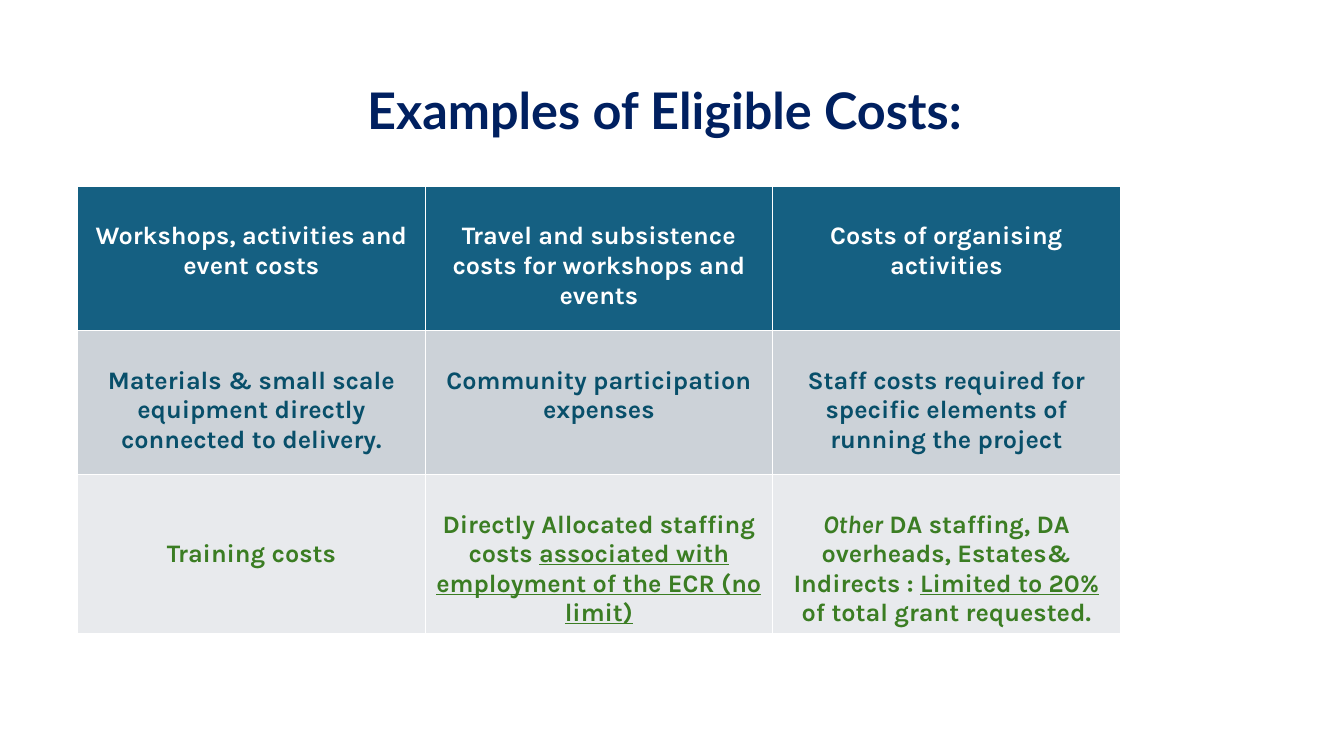
from pptx import Presentation
from pptx.dml.color import RGBColor
from pptx.enum.text import MSO_ANCHOR, PP_ALIGN
from pptx.util import Inches, Pt

LEFT, CENTER = PP_ALIGN.LEFT, PP_ALIGN.CENTER
MIDDLE = MSO_ANCHOR.MIDDLE
TITLE_ONLY = 5

NAVY = RGBColor(0x00, 0x20, 0x60)
WHITE = RGBColor(0xFF, 0xFF, 0xFF)
TEAL = RGBColor(0x15, 0x60, 0x82)
DARK_TEAL = RGBColor(0x08, 0x4F, 0x6A)
GREEN = RGBColor(0x3B, 0x7D, 0x23)
GREY = RGBColor(0xCC, 0xD2, 0xD8)
PALE_GREY = RGBColor(0xE8, 0xEA, 0xED)

TITLE_FORMAT = {"name": "Lato", "size": Pt(36), "bold": True}
CELL_FORMAT = {"name": "Karla", "size": Pt(18), "bold": True}
UNDERLINED = {"underline": True}
ITALIC = {"italic": True}

CELL_TOP = 0.35
LOW_CELL_TOP = 0.64

# Each row: height, fill, text colour, cells; each cell: top margin, spans.
COST_ROWS = [
    (1.43, TEAL, WHITE, [
        (CELL_TOP, [("Workshops, activities and event costs", {})]),
        (CELL_TOP, [("Travel and subsistence costs for workshops and events", {})]),
        (CELL_TOP, [("Costs of organising activities", {})]),
    ]),
    (1.43, GREY, DARK_TEAL, [
        (CELL_TOP, [("Materials & small scale equipment directly connected to delivery.", {})]),
        (CELL_TOP, [("Community participation expenses", {})]),
        (CELL_TOP, [("Staff costs required for specific elements of running the project", {})]),
    ]),
    (1.57, PALE_GREY, GREEN, [
        (LOW_CELL_TOP, [("Training costs", {})]),
        (CELL_TOP, [("Directly Allocated staffing costs ", {}),
                    ("associated with employment of the ECR (no limit)", UNDERLINED)]),
        (CELL_TOP, [("Other", ITALIC),
                    (" DA staffing, DA overheads, Estates& Indirects : ", {}),
                    ("Limited to 20% ", UNDERLINED),
                    ("of total grant requested.", {})]),
    ]),
]


def add_span(para, text, color, formats):
    span = para.add_run()
    span.text = text
    span.font.color.rgb = color
    for name, value in formats.items():
        setattr(span.font, name, value)


def place_title(page, left, top, width, height):
    title = page.shapes.title
    title.left, title.top = Inches(left), Inches(top)
    title.width, title.height = Inches(width), Inches(height)
    title.text_frame.vertical_anchor = MIDDLE
    para = title.text_frame.paragraphs[0]
    para.alignment = LEFT
    para.line_spacing = 0.9
    add_span(para, "Examples of Eligible Costs:", NAVY, TITLE_FORMAT)


def fill_cell(cell, top_margin, spans, fill, color):
    cell.fill.solid()
    cell.fill.fore_color.rgb = fill
    cell.margin_top = Inches(top_margin)
    para = cell.text_frame.paragraphs[0]
    para.alignment = CENTER
    for text, formats in spans:
        add_span(para, text, color, CELL_FORMAT | formats)


def add_cost_table(page, left, top, width):
    """The table style draws the white rules and the thick header rule."""
    column_count = len(COST_ROWS[0][3])
    height = sum(row[0] for row in COST_ROWS)
    table = page.shapes.add_table(
        len(COST_ROWS), column_count,
        Inches(left), Inches(top), Inches(width), Inches(height)).table
    for column in table.columns:
        column.width = Inches(width / column_count)
    for row, (row_height, fill, color, cells) in zip(table.rows, COST_ROWS):
        row.height = Inches(row_height)
        for cell, (top_margin, spans) in zip(row.cells, cells):
            fill_cell(cell, top_margin, spans, fill, color)


def main():
    deck = Presentation()
    deck.slide_width, deck.slide_height = Inches(13.33), Inches(7.5)
    page = deck.slides.add_slide(deck.slide_layouts[TITLE_ONLY])
    place_title(page, 3.54, 0.4, 8.87, 1.45)
    add_cost_table(page, 0.77, 1.85, 10.34)
    deck.save("out.pptx")


if __name__ == "__main__":
    main()
